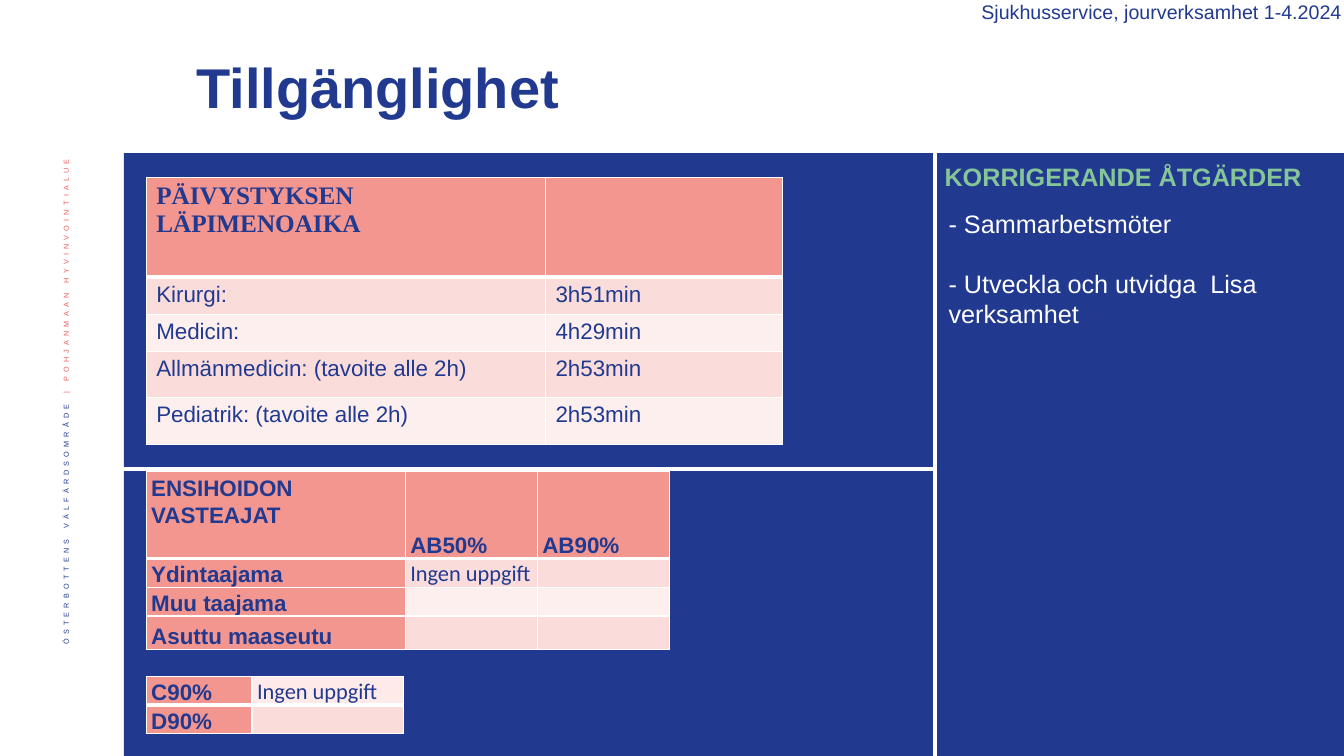
from lxml.etree import SubElement
from pptx import Presentation
from pptx.dml.color import RGBColor
from pptx.enum.shapes import MSO_CONNECTOR, MSO_SHAPE
from pptx.enum.text import MSO_ANCHOR, PP_ALIGN
from pptx.oxml import parse_xml
from pptx.oxml.ns import nsdecls, qn
from pptx.util import Inches, Pt

NAVY, WHITE, GREEN, RED = "213A8F", "FFFFFF", "85C598", "EB5C5F"
CORAL, ROSE, BLUSH, PINK = "F39690", "FADDDB", "FDEFEE", "FDEAE9"
WIDTH, HEIGHT = 13.33, 7.5
BAND_BOTTOM, SPLIT_X, SPLIT_Y = 1.52, 9.27, 4.65


def rgb(value):
    return RGBColor.from_string(value)


def add_run(p, text, size, color=NAVY, bold=False, font="Arial"):
    r = p.add_run()
    r.text = text
    r.font.size = Pt(size)
    r.font.name = font
    r.font.bold = bold
    r.font.color.rgb = rgb(color)
    return r


def add_box(slide, x, y, w, h, align=PP_ALIGN.LEFT, anchor=MSO_ANCHOR.TOP):
    tf = slide.shapes.add_textbox(Inches(x), Inches(y), Inches(w), Inches(h)).text_frame
    tf.word_wrap = True
    tf.vertical_anchor = anchor
    tf.paragraphs[0].alignment = align
    return tf


def add_rect(slide, x, y, w, h, color):
    sp = slide.shapes.add_shape(MSO_SHAPE.RECTANGLE, Inches(x), Inches(y), Inches(w), Inches(h))
    sp.shadow.inherit = False
    sp.fill.solid()
    sp.fill.fore_color.rgb = rgb(color)
    sp.line.fill.background()


def add_rule(slide, x1, y1, x2, y2):
    line = slide.shapes.add_connector(
        MSO_CONNECTOR.STRAIGHT, Inches(x1), Inches(y1), Inches(x2), Inches(y2))
    line.line.color.rgb = rgb(WHITE)
    line.line.width = Pt(3)
    SubElement(line._element.spPr, qn("a:effectLst"))


def set_borders(cell, top, bottom):
    tc_pr = cell._tc.get_or_add_tcPr()
    widths = {"L": 1, "R": 1, "T": top, "B": bottom}
    for i, (side, width) in enumerate(widths.items()):
        tc_pr.insert(i, parse_xml(
            f'<a:ln{side} {nsdecls("a")} w="{Pt(width)}"><a:solidFill>'
            f'<a:srgbClr val="{WHITE}"/></a:solidFill></a:ln{side}>'))


def add_grid(slide, x, y, widths, heights, texts, fills, style):
    shape = slide.shapes.add_table(
        len(heights), len(widths), Inches(x), Inches(y),
        Inches(sum(widths)), Inches(sum(heights)))
    table = shape.table
    for column, width in zip(table.columns, widths):
        column.width = Inches(width)
    for i, height in enumerate(heights):
        table.rows[i].height = Inches(height)
        for j, text in enumerate(texts[i]):
            cell = table.cell(i, j)
            cell.fill.solid()
            cell.fill.fore_color.rgb = rgb(fills[i][j])
            set_borders(cell, 3 if i == 1 else 1, 3 if i == 0 else 1)
            p = cell.text_frame.paragraphs[0]
            style(cell, p, i, j)
            if not text:
                p._p.get_or_add_endParaRPr().set("sz", "1600")
    return table


def add_backdrop(slide):
    add_rect(slide, 1.23, BAND_BOTTOM, WIDTH - 1.23, HEIGHT - BAND_BOTTOM, NAVY)
    add_rule(slide, SPLIT_X, BAND_BOTTOM, SPLIT_X, HEIGHT)
    add_rule(slide, 1.21, SPLIT_Y, SPLIT_X, SPLIT_Y)


def add_side_label(slide, x, y, w, h):
    tf = add_box(slide, x, y, w, h, PP_ALIGN.RIGHT, MSO_ANCHOR.MIDDLE)
    tf._txBody.bodyPr.set("vert", "vert270")
    p = tf.paragraphs[0]
    p.line_spacing = 0.9
    for text, color in (("ÖSTERBOTTENS VÄLFÄRDSOMRÅDE ", NAVY),
                        ("| POHJANMAAN HYVINVOINTIALUE ", RED)):
        r_pr = add_run(p, text, 9, color)._r.get_or_add_rPr()
        r_pr.set("baseline", "30000")
        r_pr.set("spc", "300")


def add_header(slide, x, y, w, h):
    tf = add_box(slide, x + 7.46, y, w - 7.46, 0.34, PP_ALIGN.RIGHT)
    tf.margin_top = 0
    tf.margin_right = Inches(0.02)
    add_run(tf.paragraphs[0], "Sjukhusservice, jourverksamhet 1-4.2024", 14)
    tf = add_box(slide, x + 1.85, y + 0.47, 10.2, h - 0.67, anchor=MSO_ANCHOR.MIDDLE)
    tf.paragraphs[0].line_spacing = 0.9
    add_run(tf.paragraphs[0], "Tillgänglighet", 40, bold=True)


def add_actions(slide, x, y, w):
    tf = add_box(slide, x, y, w - 0.1, 0.4)
    add_run(tf.paragraphs[0], "KORRIGERANDE ÅTGÄRDER", 18, GREEN, True)
    tf = add_box(slide, x + 0.04, y + 0.47, w - 0.04, 1.31)
    add_run(tf.paragraphs[0], "- Sammarbetsmöter", 18, WHITE)
    p = tf.add_paragraph()
    p.space_before = Pt(21)
    add_run(p, "- Utveckla och utvidga  Lisa verksamhet", 18, WHITE)


def add_throughput(slide, x, y):
    texts = [("PÄIVYSTYKSEN LÄPIMENOAIKA", ""),
             ("Kirurgi:", "3h51min"),
             ("Medicin:", "4h29min"),
             ("Allmänmedicin: (tavoite alle 2h)", "2h53min"),
             ("Pediatrik: (tavoite alle 2h)", "2h53min")]
    fills = [[color] * 2 for color in (CORAL, ROSE, BLUSH, ROSE, BLUSH)]

    def style(cell, p, i, j):
        if texts[i][j] and i == 0:
            add_run(p, texts[i][j], 18, bold=True, font="Times New Roman")
        elif texts[i][j]:
            add_run(p, texts[i][j], 16)

    add_grid(slide, x, y, [3.96, 2.35], [0.99, 0.37, 0.36, 0.46, 0.46], texts, fills, style)


def add_response(slide, x, y, widths, heights, texts, fills):
    def style(cell, p, i, j):
        cell.margin_left = cell.margin_right = Inches(0.05)
        cell.margin_top = cell.margin_bottom = 0
        cell.vertical_anchor = MSO_ANCHOR.BOTTOM
        p.line_spacing = 1.07
        text = texts[i][j]
        if text == "Ingen uppgift":
            add_run(p, text, 16, font="Calibri")
        elif text:
            add_run(p, text, 16, bold=True)

    return add_grid(slide, x, y, widths, heights, texts, fills, style)


def add_response_tables(slide, x, y):
    table = add_response(
        slide, x, y, [2.57, 1.31, 1.31], [0.86, 0.28, 0.28, 0.33],
        [("ENSIHOIDON VASTEAJAT", "AB50%", "AB90%"),
         ("Ydintaajama", "Ingen uppgift", ""),
         ("Muu taajama", "", ""),
         ("Asuttu maaseutu", "", "")],
        [(CORAL, color, color) for color in (CORAL, ROSE, BLUSH, ROSE)])
    heading = table.cell(0, 0)
    heading.vertical_anchor = MSO_ANCHOR.TOP
    heading.margin_top = Inches(0.03)
    heading.margin_right = Inches(0.6)
    add_response(
        slide, x, y + 2.03, [1.05, 1.5], [0.28, 0.28],
        [("C90%", "Ingen uppgift"), ("D90%", "")],
        [(CORAL, PINK), (CORAL, ROSE)])


def main():
    prs = Presentation()
    prs.slide_width = Inches(WIDTH)
    prs.slide_height = Inches(HEIGHT)
    slide = prs.slides.add_slide(prs.slide_layouts[6])
    add_backdrop(slide)
    add_side_label(slide, 0.42, 1.42, 0.52, 5.73)
    add_header(slide, 0, 0, WIDTH, BAND_BOTTOM)
    add_actions(slide, SPLIT_X, 1.55, WIDTH - SPLIT_X)
    add_response_tables(slide, 1.45, 4.68)
    add_throughput(slide, 1.45, 1.76)
    prs.save("out.pptx")


if __name__ == "__main__":
    main()
